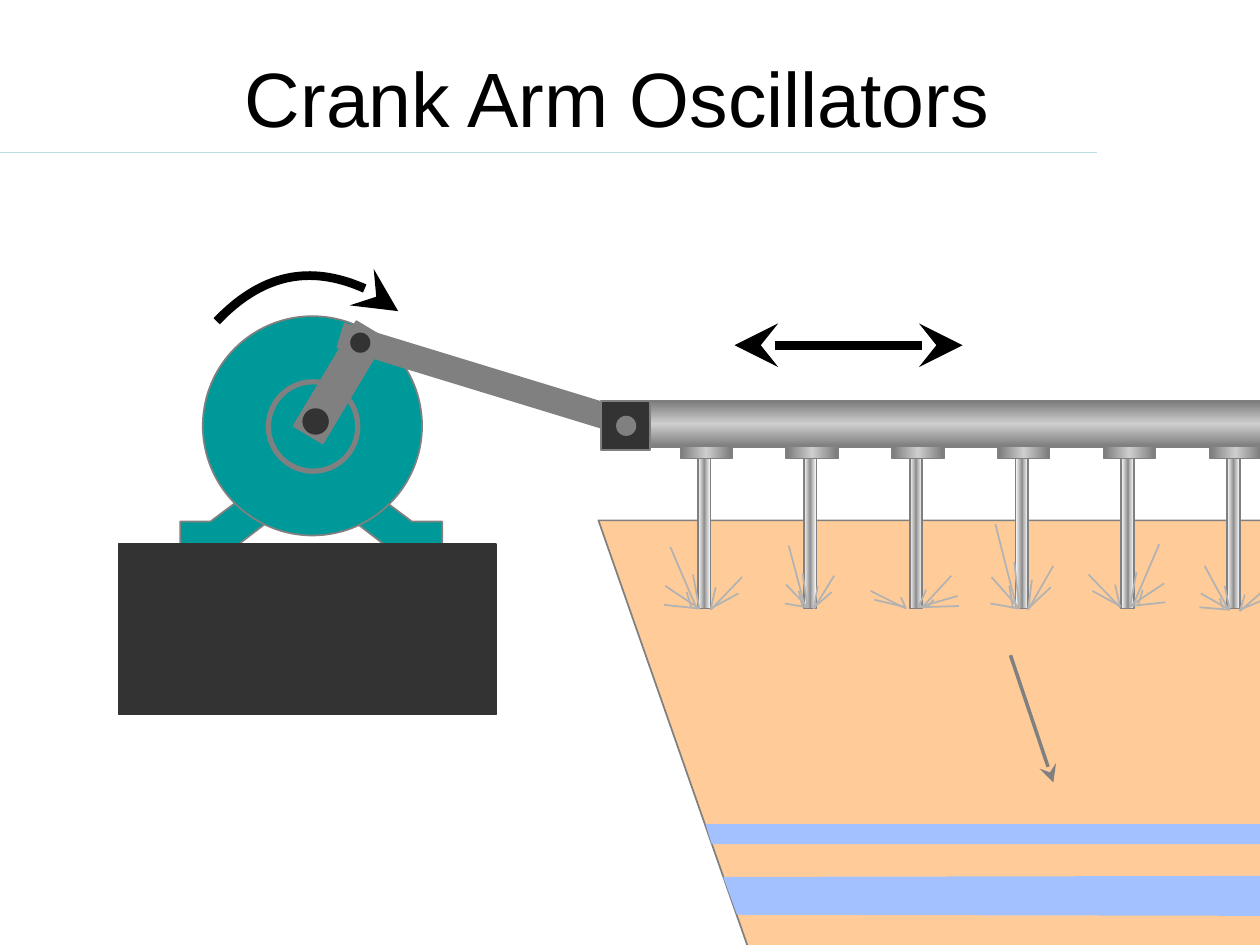
from copy import deepcopy
from dataclasses import dataclass
from typing import NamedTuple

from lxml import etree
from pptx import Presentation
from pptx import util as u
from pptx.dml.color import RGBColor
from pptx.enum import shapes, text
from pptx.oxml import ns

PX = 9144
RECT = shapes.MSO_SHAPE.RECTANGLE
OVAL = shapes.MSO_SHAPE.OVAL


@dataclass(frozen=True)
class Theme:
    font: str = "Arial"
    title: int = 44
    black: str = "000000"
    rule: str = "BBE0E3"
    teal: str = "009999"
    gray: str = "808080"
    dark: str = "333333"
    sand: str = "FFCC99"
    water: str = "A2C1FE"
    spray: str = "B2B2B2"
    pipe: tuple = ("7A7A7A", "CECECE", "7A7A7A")
    tube: tuple = ("FFFFFF", "919191", "FFFFFF")


T = Theme()


class Point(NamedTuple):
    x: int
    y: int


class Box(NamedTuple):
    x: int
    y: int
    w: int
    h: int


class Ray(NamedTuple):
    a: Point
    b: Point


@dataclass(frozen=True)
class Spray:
    box: Box
    flip: bool = False


RAY_W, RAY_H = 62, 50
RAYS = [
    Ray(Point(28, 49), Point(1, 31)),
    Ray(Point(37, 49), Point(59, 37)),
    Ray(Point(37, 50), Point(41, 32)),
    Ray(Point(37, 50), Point(62, 24)),
    Ray(Point(28, 49), Point(0, 46)),
    Ray(Point(28, 49), Point(23, 22)),
    Ray(Point(26, 49), Point(5, 0)),
    Ray(Point(22, 49), Point(18, 36)),
]
SPRAYS = [
    Spray(Box(527, 434, 62, 50)),
    Spray(Box(623, 433, 39, 50)),
    Spray(Box(691, 457, 70, 26), True),
    Spray(Box(786, 416, 50, 68)),
    Spray(Box(864, 432, 61, 50), True),
    Spray(Box(952, 449, 54, 36)),
]
PITCH = 84
MID = 247
FOOT = [Point(187, 399), Point(167, 414), Point(143, 414),
        Point(143, 433), Point(188, 433), Point(218, 410)]
GROUND = [Point(1034, 413), Point(475, 413), Point(605, 784), Point(1088, 781)]
DEEP = [Point(585, 726), Point(1074, 727), Point(1077, 695), Point(574, 696)]
UPPER = [Point(565, 670), Point(1053, 670), Point(1056, 654), Point(560, 654)]
TURN = [Point(172, 255), Point(212, 213), Point(277, 209), Point(316, 247)]


def ink(line, color: str | None, width: int = 1) -> None:
    if color is None:
        line.fill.background()
        return
    line.color.rgb = RGBColor.from_string(color)
    line.width = u.Pt(width)


def paint(shape, fill: str | None, line: str | None, width: int = 1) -> None:
    shape.shadow.inherit = False
    if fill is None:
        shape.fill.background()
    else:
        shape.fill.solid()
        shape.fill.fore_color.rgb = RGBColor.from_string(fill)
    ink(shape.line, line, width)


def add(slide, kind, box: Box, fill: str | None, line: str | None = None,
        width: int = 1, turn: float = 0):
    shape = slide.shapes.add_shape(kind, *(n * PX for n in box))
    paint(shape, fill, line, width)
    shape.rotation = turn
    return shape


def metal(slide, box: Box, tones: tuple, angle: int = 0) -> None:
    shape = add(slide, RECT, box, None, T.gray)
    shape.fill.gradient()
    shape.fill.gradient_angle = angle
    stops = shape._element.spPr.find(".//" + ns.qn("a:gsLst"))
    stops.append(deepcopy(stops[0]))
    for stop, tone, spot in zip(shape.fill.gradient_stops, tones, (0, 0.5, 1)):
        stop.color.rgb = RGBColor.from_string(tone)
        stop.position = spot


def outline(slide, points: list[Point], fill: str | None, line: str | None = None,
            width: int = 1, close: bool = True):
    pen = slide.shapes.build_freeform(*points[0], scale=PX)
    pen.add_line_segments(points[1:], close=close)
    shape = pen.convert_to_shape()
    paint(shape, fill, line, width)
    return shape


def tip(shape, *ends: str) -> None:
    line = shape.line._get_or_add_ln()
    for end in ends:
        etree.SubElement(line, ns.qn(f"a:{end}"), type="stealth", w="lg", len="lg")


def curve(slide, points: list[Point], color: str, width: int):
    shape = outline(slide, points, None, color, width, close=False)
    track = shape._element.spPr.find(".//" + ns.qn("a:path"))
    bend = etree.Element(ns.qn("a:cubicBezTo"))
    for step in track.findall(ns.qn("a:lnTo")):
        bend.append(step[0])
        track.remove(step)
    track.append(bend)
    return shape


def link(slide, a: Point, b: Point, color: str, width: int = 1):
    line = slide.shapes.add_connector(
        shapes.MSO_CONNECTOR.STRAIGHT, *(n * PX for n in (*a, *b)))
    ink(line.line, color, width)
    etree.SubElement(line._element.spPr, ns.qn("a:effectLst"))
    return line


def title(slide, box: Box, words: str) -> None:
    frame = slide.shapes.add_textbox(*(n * PX for n in box)).text_frame
    frame.word_wrap = True
    frame.vertical_anchor = text.MSO_ANCHOR.MIDDLE
    frame.margin_top = frame.margin_bottom = 0
    para = frame.paragraphs[0]
    para.alignment = text.PP_ALIGN.CENTER
    run = para.add_run()
    run.text = words
    run.font.name = T.font
    run.font.size = u.Pt(T.title)
    run.font.color.rgb = RGBColor.from_string(T.black)


def place(spray: Spray, dot: Point) -> Point:
    box = spray.box
    x = RAY_W - dot.x if spray.flip else dot.x
    return Point(box.x + round(x * box.w / RAY_W),
                 box.y + round(dot.y * box.h / RAY_H))


def motor(slide) -> None:
    outline(slide, FOOT, T.teal, T.gray)
    outline(slide, [Point(2 * MID - p.x, p.y) for p in FOOT], T.teal, T.gray)
    add(slide, OVAL, Box(161, 251, 174, 174), T.teal, T.gray)
    add(slide, OVAL, Box(213, 303, 71, 71), None, T.gray, 3)
    add(slide, RECT, Box(256, 255, 27, 97), T.gray, T.gray, turn=30.9)
    link(slide, Point(270, 266), Point(499, 336), T.gray, 15)
    add(slide, OVAL, Box(240, 324, 21, 21), T.dark)
    add(slide, OVAL, Box(278, 264, 16, 16), T.dark)
    tip(curve(slide, TURN, T.black, 5), "tailEnd")
    add(slide, RECT, Box(94, 432, 300, 135), T.dark, T.dark)


def header(slide) -> None:
    metal(slide, Box(514, 318, 670, 37), T.pipe, 90)
    for i in range(len(SPRAYS)):
        metal(slide, Box(554 + i * PITCH, 358, 10, 125), T.tube)
        metal(slide, Box(540 + i * PITCH, 354, 41, 10), T.pipe)
    add(slide, RECT, Box(477, 318, 39, 39), T.dark, T.gray)
    add(slide, OVAL, Box(489, 330, 16, 16), T.gray)
    tip(link(slide, Point(583, 274), Point(764, 274), T.black, 5),
        "headEnd", "tailEnd")


def main() -> None:
    deck = Presentation()
    deck.slide_width, deck.slide_height = 1000 * PX, 750 * PX
    slide = deck.slides.add_slide(deck.slide_layouts[6])
    title(slide, Box(130, 45, 720, 64), "Crank Arm Oscillators")
    link(slide, Point(0, 121), Point(871, 121), T.rule)
    motor(slide)
    outline(slide, GROUND, T.sand, T.gray)
    header(slide)
    for spray in SPRAYS:
        for ray in RAYS:
            link(slide, place(spray, ray.a), place(spray, ray.b), T.spray)
    tip(link(slide, Point(802, 520), Point(836, 621), T.gray, 2), "tailEnd")
    for band in (DEEP, UPPER):
        outline(slide, band, T.water)
    deck.save("out.pptx")


if __name__ == "__main__":
    main()
